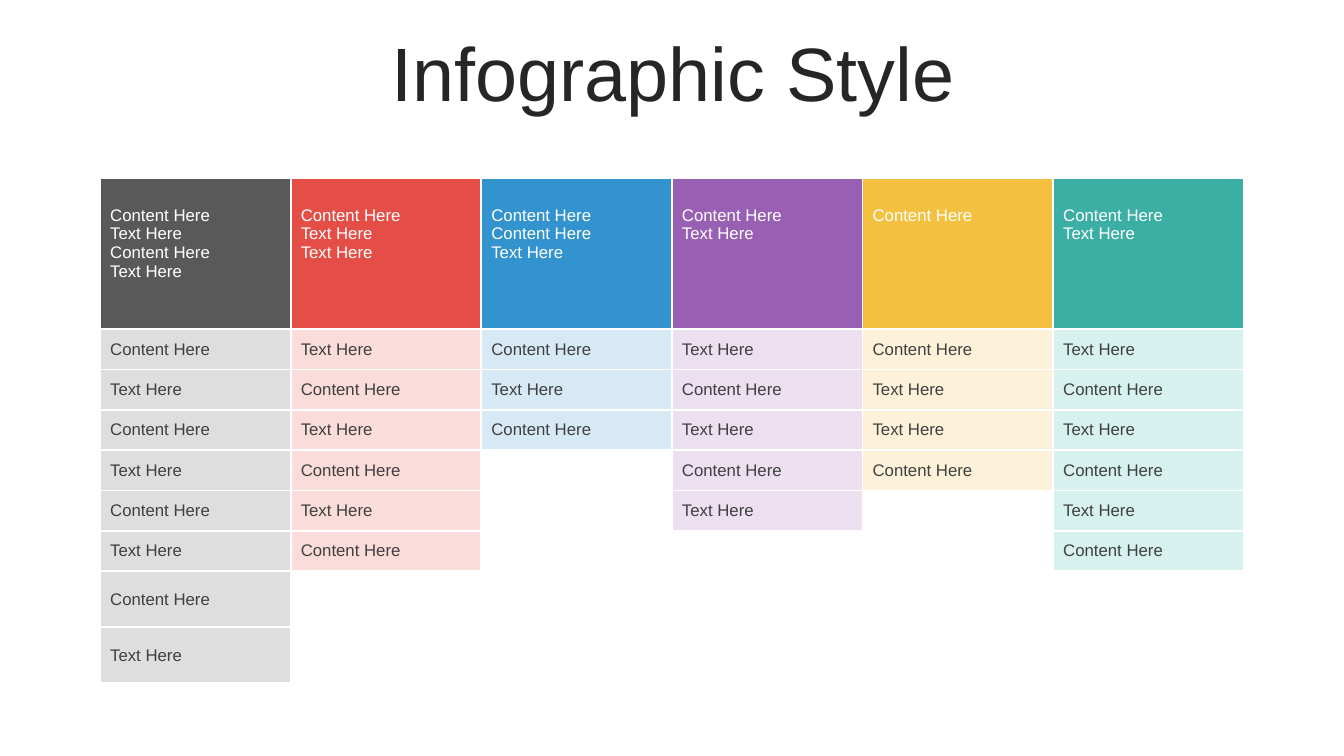
from lxml import etree
from pptx import Presentation
from pptx.dml.color import RGBColor
from pptx.enum import text
from pptx.oxml import ns
from pptx.util import Pt

C, T = "Content Here", "Text Here"
# header colour, body colour, header lines, body entries
COLUMNS = [
    ("595959", "DEDEDE", [C, T, C, T], [C, T] * 4),
    ("E54E46", "FADCDA", [C, T, T], [T, C] * 3),
    ("3293CF", "D6E9F5", [C, C, T], [C, T, C]),
    ("995FB2", "EBDFF0", [C, T], [T, C, T, C, T]),
    ("F3C040", "FDF2D9", [C], [C, T, T, C]),
    ("3CAFA4", "D6F1EE", [C, T], [T, C] * 3),
]
ROW_HEIGHTS = [107.75] + [28.75] * 6 + [40] * 2


def rgb(value):
    return RGBColor.from_string(value)


def style_font(p, size, color):
    p.font.name = "Arial"
    p.font.size = Pt(size)
    p.font.color.rgb = rgb(color)


def add_title(slide, left, top, width, height):
    tf = slide.shapes.add_textbox(Pt(left), Pt(top), Pt(width), Pt(height)).text_frame
    tf.word_wrap = True
    tf.vertical_anchor = text.MSO_ANCHOR.MIDDLE
    p = tf.paragraphs[0]
    p.text = "Infographic Style"
    p.alignment = text.PP_ALIGN.CENTER
    p.line_spacing = 0.9
    style_font(p, 54, "262626")


def add_borders(cell, color, width):
    tc_pr = cell._tc.get_or_add_tcPr()
    for side in ("lnL", "lnR", "lnT", "lnB"):
        ln = etree.SubElement(tc_pr, ns.qn(f"a:{side}"), w=str(Pt(width)))
        fill = etree.SubElement(ln, ns.qn("a:solidFill"))
        etree.SubElement(fill, ns.qn("a:srgbClr"), val=color)


def fill_cell(cell, lines, fill, color):
    cell.fill.solid()
    cell.fill.fore_color.rgb = rgb(fill)
    cell.vertical_anchor = text.MSO_ANCHOR.MIDDLE
    cell.text = "\n".join(lines)
    for p in cell.text_frame.paragraphs:
        style_font(p, 12, color)


def add_content_table(slide, left, top, width):
    frame = slide.shapes.add_table(len(ROW_HEIGHTS), len(COLUMNS), Pt(left), Pt(top),
                                   Pt(width), Pt(sum(ROW_HEIGHTS)))
    table = frame.table
    table.first_row = table.horz_banding = False
    for row, height in zip(table.rows, ROW_HEIGHTS):
        row.height = Pt(height)
    for cell in table.iter_cells():
        add_borders(cell, "FFFFFF", 1.5)
        cell.fill.background()
    for col, (dark, light, heading, entries) in enumerate(COLUMNS):
        table.columns[col].width = Pt(width / len(COLUMNS))
        header = table.cell(0, col)
        fill_cell(header, heading, dark, "FFFFFF")
        header.vertical_anchor = text.MSO_ANCHOR.TOP
        header.margin_top = Pt(19.5)
        for row, entry in enumerate(entries, 1):
            fill_cell(table.cell(row, col), [entry], light, "404040")


def main():
    prs = Presentation()
    prs.slide_width, prs.slide_height = Pt(960), Pt(540)
    slide = prs.slides.add_slide(prs.slide_layouts[6])
    add_title(slide, 25, 26.5, 911.5, 57)
    add_content_table(slide, 71.5, 127.5, 817)
    prs.save("out.pptx")


if __name__ == "__main__":
    main()
